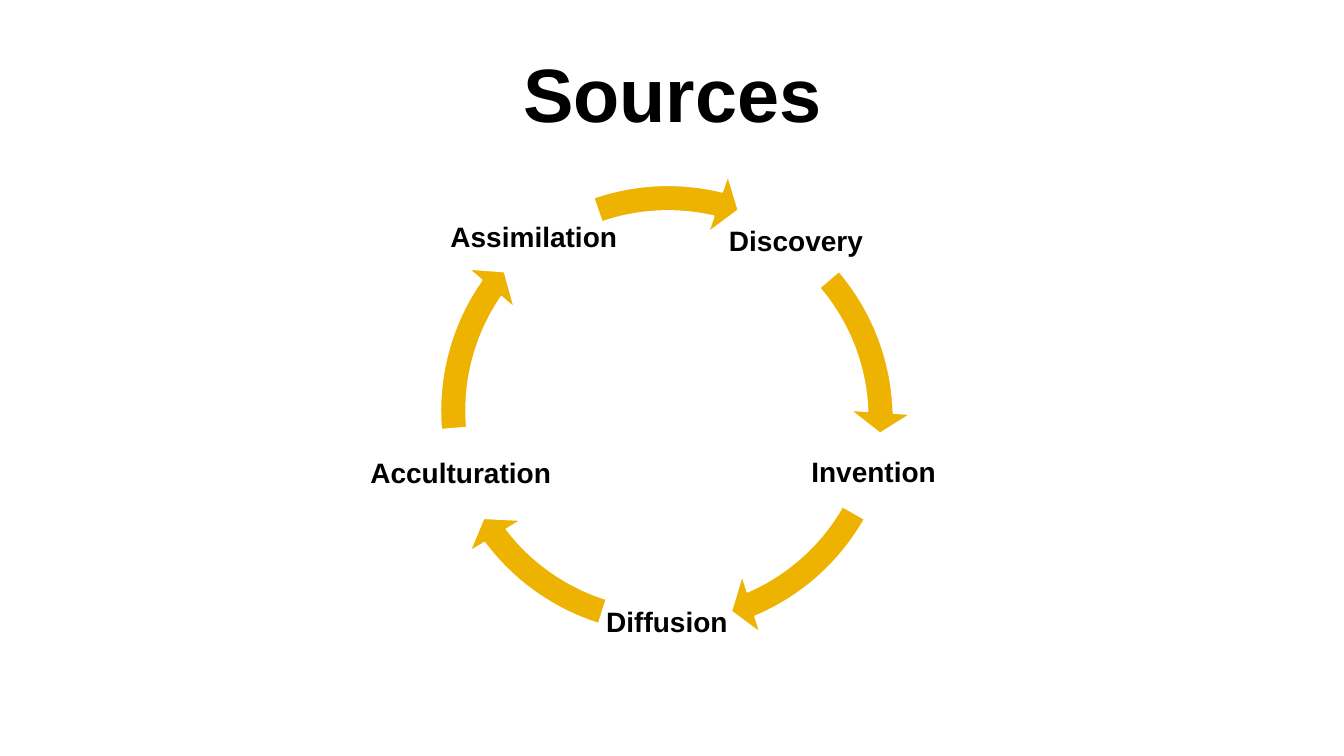
from dataclasses import dataclass

from pptx import Presentation
from pptx.dml.color import RGBColor
from pptx.enum import shapes, text
from pptx.util import Inches, Pt

COLORS = {"text": "000000", "arrow": "EDB300", "outline": "FFFFFF"}
FONT = "Arial"
RING_SIZE = 4.85
BAND_WIDTH, HEAD_ANGLE, HEAD_WIDTH = 0.052, 5.6, 0.061
ANGLE_UNIT = 0.6  # adjustment value per degree


@dataclass(frozen=True)
class Stage:
    """A label and the arrow that leads on from it (angles clockwise, in degrees)."""
    name: str
    left: float
    top: float
    width: float
    height: float
    ring_left: float
    ring_top: float
    start_angle: float
    end_angle: float


STAGES = [
    Stage("Discovery", 6.94, 2.06, 1.91, 0.7, 4.18, 1.73, 319.56, 358.27),
    Stage("Invention", 7.81, 4.3, 1.71, 0.8, 4.19, 1.61, 29.65, 66.92),
    Stage("Diffusion", 5.97, 5.54, 1.29, 1.29, 4.19, 1.61, 107.49, 143.03),
    Stage("Acculturation", 3.52, 4.25, 2.1, 0.91, 4.2, 1.65, 175.26, 214.77),
    Stage("Assimilation", 4.38, 2.06, 1.83, 0.61, 4.2, 1.67, 250.95, 283.52),
]


def color(name: str) -> RGBColor:
    return RGBColor.from_string(COLORS[name])


def write_text(shape, wording: str, *, size: float, align, anchor,
               line_spacing: float = 1.0, margin: float | None = None) -> None:
    frame = shape.text_frame
    frame.word_wrap = True
    frame.auto_size = text.MSO_AUTO_SIZE.NONE
    frame.vertical_anchor = anchor
    if margin is not None:
        frame.margin_left = frame.margin_right = Inches(margin)
        frame.margin_top = frame.margin_bottom = Inches(margin)
    paragraph = frame.paragraphs[0]
    paragraph.alignment = align
    paragraph.line_spacing = line_spacing
    run = paragraph.add_run()
    run.text = wording
    run.font.name = FONT
    run.font.size = Pt(size)
    run.font.bold = True
    run.font.color.rgb = color("text")


def add_label(slide, stage: Stage) -> None:
    box = slide.shapes.add_textbox(Inches(stage.left), Inches(stage.top),
                                   Inches(stage.width), Inches(stage.height))
    write_text(box, stage.name, size=20, align=text.PP_ALIGN.CENTER,
               anchor=text.MSO_ANCHOR.MIDDLE, line_spacing=0.9, margin=0.03)


def add_arrow(slide, stage: Stage) -> None:
    arrow = slide.shapes.add_shape(
        shapes.MSO_SHAPE.CIRCULAR_ARROW, Inches(stage.ring_left),
        Inches(stage.ring_top), Inches(RING_SIZE), Inches(RING_SIZE))
    settings = (BAND_WIDTH, HEAD_ANGLE * ANGLE_UNIT, stage.end_angle * ANGLE_UNIT,
                stage.start_angle * ANGLE_UNIT, HEAD_WIDTH)
    for index, value in enumerate(settings):
        arrow.adjustments[index] = value
    arrow.shadow.inherit = False
    arrow.fill.solid()
    arrow.fill.fore_color.rgb = color("arrow")
    arrow.line.color.rgb = color("outline")
    arrow.line.width = Pt(1)


def main() -> None:
    presentation = Presentation()
    presentation.slide_width = Inches(13.33)
    presentation.slide_height = Inches(7.5)
    slide = presentation.slides.add_slide(presentation.slide_layouts[5])

    # Title
    title = slide.shapes.title
    title.left, title.top = Inches(5.09), Inches(0.42)
    title.width, title.height = Inches(6.67), Inches(1.01)
    write_text(title, "Sources", size=54, align=text.PP_ALIGN.LEFT,
               anchor=text.MSO_ANCHOR.TOP)

    # Cycle of labels and arrows
    for stage in STAGES:
        add_label(slide, stage)
        add_arrow(slide, stage)

    presentation.save("out.pptx")


if __name__ == "__main__":
    main()
